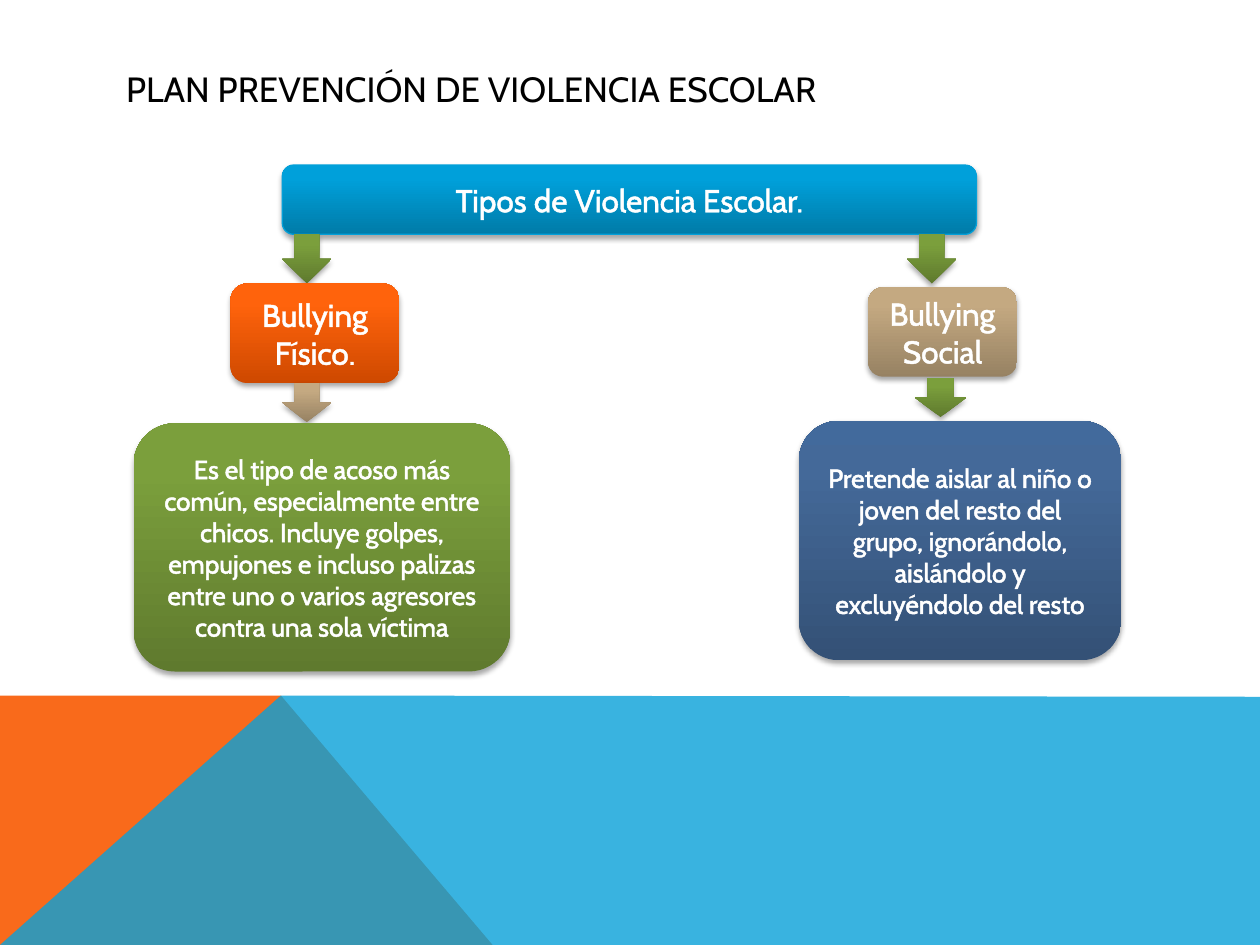
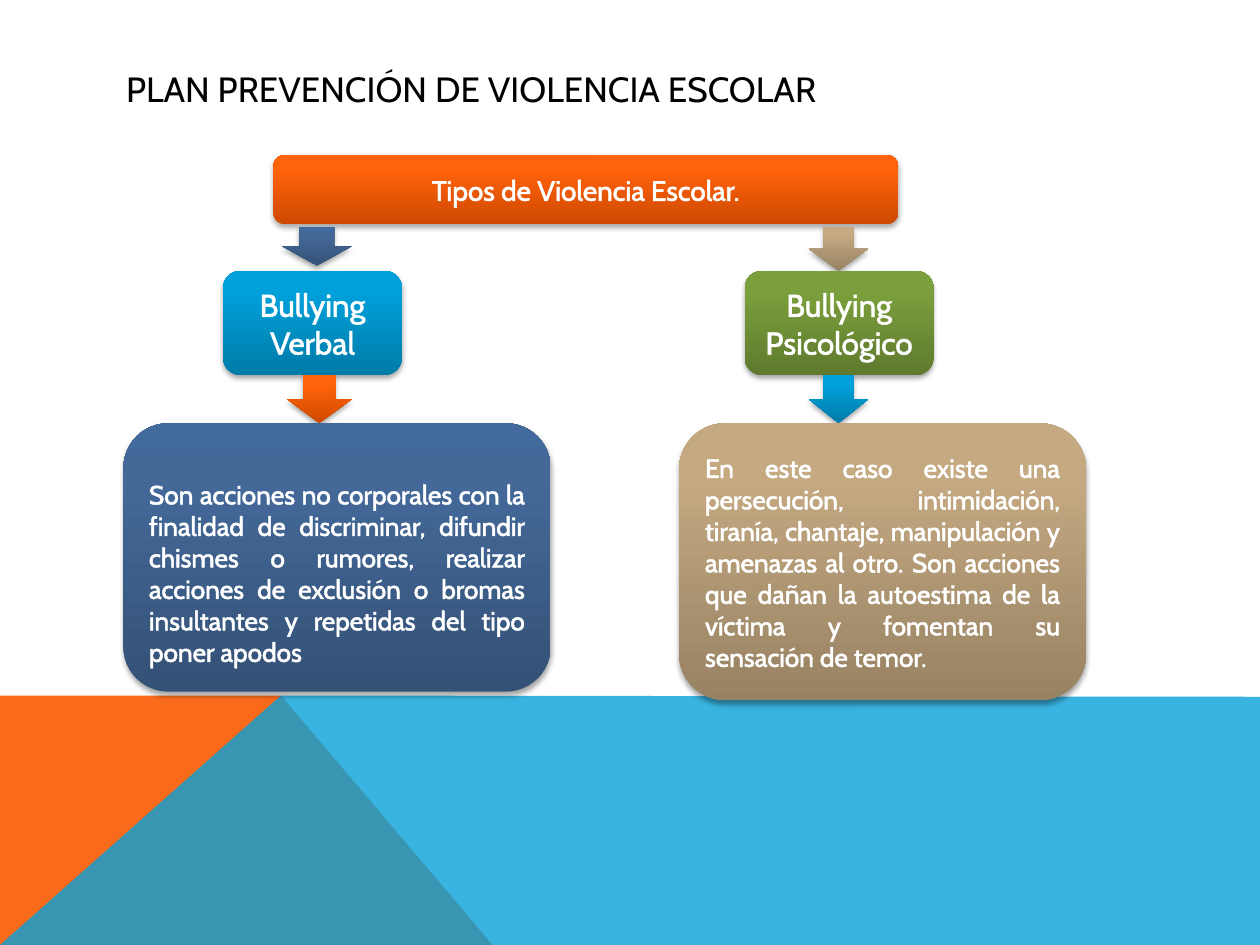
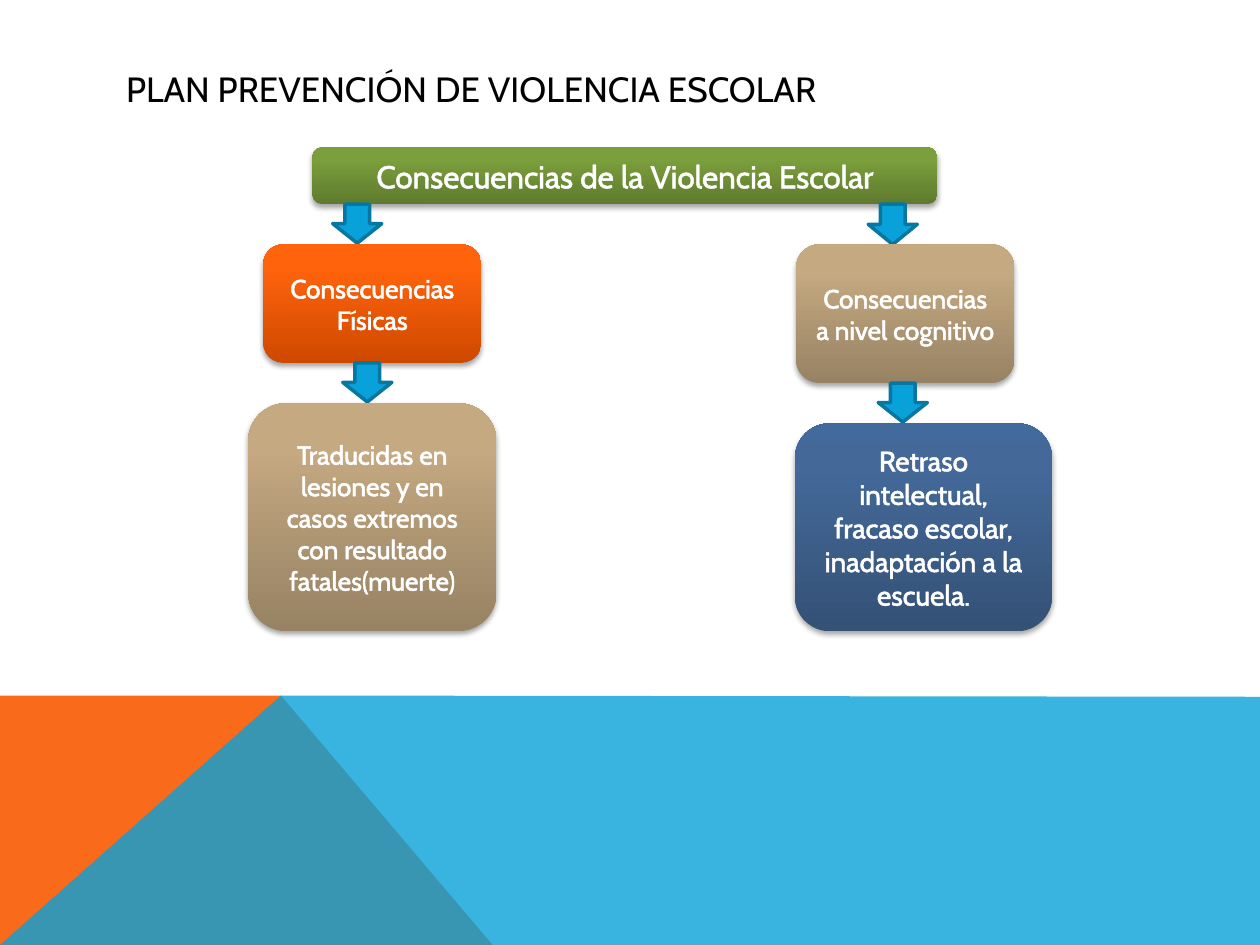
from dataclasses import dataclass

from pptx import Presentation
from pptx.dml.color import RGBColor
from pptx.enum.shapes import MSO_SHAPE
from pptx.enum.text import MSO_ANCHOR, MSO_AUTO_SIZE, PP_ALIGN
from pptx.oxml import parse_xml
from pptx.oxml.ns import nsdecls, qn
from pptx.util import Inches, Pt


@dataclass(frozen=True)
class Theme:
    font: str = "Cabin"
    ink: str = "000000"
    paper: str = "FFFFFF"
    accent: str = "08A1D9"
    accent_edge: str = "0677A1"
    header_edge: str = "03A0D9"
    wedge: str = "F96A1B"
    title_size: int = 20
    large: int = 18
    medium: int = 16
    small: int = 15
    blue: tuple = ("007BA8", "00A0DA", "00A0DB")
    green: tuple = ("5F7A2E", "7B9F3C", "7CA13B")
    orange: tuple = ("CE4900", "FF630C", "FF640E")
    sand: tuple = ("978263", "C4A981", "C6AA80")
    navy: tuple = ("345176", "446999", "426A9C")


THEME = Theme()
TITLE = "PLAN PREVENCIÓN DE VIOLENCIA ESCOLAR"
TITLE_BOX = (0.9, 0.4, 8.22, 0.6)
WEDGE_POINTS = [(0, 7.5), (0, 5.52), (2.23, 5.52), (3.91, 7.5)]
SEA_POINTS = [(0, 7.5), (2.23, 5.52), (10, 5.53), (10, 7.5)]


@dataclass
class Card:
    box: tuple
    text: str
    colors: tuple
    size: int = THEME.small
    align: PP_ALIGN = PP_ALIGN.CENTER
    top_inset: float = 0.05


@dataclass
class Arrow:
    box: tuple
    colors: tuple = None


@dataclass
class Branch:
    origin: tuple
    steps: list


@dataclass
class Chart:
    header: Card
    branches: list
    header_is_body: bool = False
    header_edge: str = None


def place(shape, box):
    shape.left, shape.top, shape.width, shape.height = map(Inches, box)


def write(shape, text, size, color=THEME.paper, align=PP_ALIGN.CENTER,
          outlined=True, top_inset=0.05):
    frame = shape.text_frame
    frame.word_wrap = True
    frame.auto_size = MSO_AUTO_SIZE.NONE
    frame.vertical_anchor = MSO_ANCHOR.MIDDLE
    frame.margin_top = Inches(top_inset)
    frame.text = text
    for paragraph in frame.paragraphs:
        paragraph.alignment = align
        paragraph.space_before = Pt(0)
        for run in paragraph.runs:
            run.font.name = THEME.font
            run.font.size = Pt(size)
            run.font.color.rgb = RGBColor.from_string(color)
            if outlined:
                run.font._element.insert(0, parse_xml(
                    f'<a:ln {nsdecls("a")} w="{Pt(1.45)}"><a:solidFill>'
                    f'<a:srgbClr val="{color}"/></a:solidFill></a:ln>'))


def draw_edge(shape, color=None, width=0.75):
    if color:
        shape.line.color.rgb = RGBColor.from_string(color)
        shape.line.width = Pt(width)
    else:
        shape.line.fill.background()


def fill_solid(shape, color):
    shape.fill.solid()
    shape.fill.fore_color.rgb = RGBColor.from_string(color)


def fill_glossy(shape, colors):
    stops = "".join(
        f'<a:gs pos="{position * 1000}"><a:srgbClr val="{color}"/></a:gs>'
        for position, color in zip((0, 80, 100), colors))
    properties = shape._element.spPr
    properties.append(parse_xml(
        f'<a:gradFill {nsdecls("a")} rotWithShape="1"><a:gsLst>{stops}</a:gsLst>'
        '<a:lin ang="16200000" scaled="0"/></a:gradFill>'))
    shape.shadow.inherit = False
    properties.find(qn("a:effectLst")).append(parse_xml(
        f'<a:outerShdw {nsdecls("a")} blurRad="{Pt(3.1)}" dist="{Pt(1.8)}" '
        'dir="5400000" rotWithShape="0"><a:srgbClr val="000000">'
        '<a:alpha val="35000"/></a:srgbClr></a:outerShdw>'))


def add_preset(slide, kind, box):
    return slide.shapes.add_shape(kind, *map(Inches, box))


def format_card(shape, card, edge=None):
    fill_glossy(shape, card.colors)
    draw_edge(shape, edge)
    write(shape, card.text, card.size, align=card.align, top_inset=card.top_inset)


def add_body_header(slide, card):
    header = slide.placeholders[1]
    place(header, card.box)
    header._element.spPr.append(parse_xml(
        f'<a:prstGeom {nsdecls("a")} prst="roundRect"><a:avLst/></a:prstGeom>'))
    format_card(header, card)
    for paragraph in header.text_frame.paragraphs:
        indents = paragraph._p.get_or_add_pPr()
        indents.set("marL", "0")
        indents.set("indent", "0")
        indents.append(parse_xml(f'<a:buNone {nsdecls("a")}/>'))


def add_arrow(slide, box, colors):
    arrow = add_preset(slide, MSO_SHAPE.DOWN_ARROW, box)
    if colors:
        fill_glossy(arrow, colors)
        draw_edge(arrow)
    else:
        arrow.shadow.inherit = False
        fill_solid(arrow, THEME.accent)
        draw_edge(arrow, THEME.accent_edge, 2)


def add_branch(slide, branch):
    left, top = branch.origin
    for step in branch.steps:
        dx, dy, width, height = step.box
        box = (left + dx, top + dy, width, height)
        if isinstance(step, Arrow):
            add_arrow(slide, box, step.colors)
        else:
            format_card(add_preset(slide, MSO_SHAPE.ROUNDED_RECTANGLE, box), step)


def add_chart_slide(deck, chart):
    slide = deck.slides.add_slide(deck.slide_layouts[1 if chart.header_is_body else 5])
    write(slide.shapes.title, TITLE, THEME.title_size, color=THEME.ink,
          align=PP_ALIGN.LEFT, outlined=False)
    if chart.header_is_body:
        add_body_header(slide, chart.header)
    else:
        header = add_preset(slide, MSO_SHAPE.ROUNDED_RECTANGLE, chart.header.box)
        format_card(header, chart.header, chart.header_edge)
    for branch in chart.branches:
        add_branch(slide, branch)
    return slide


def add_master_bands(deck, slide):
    master = deck.slide_master
    place(master.placeholders[0], TITLE_BOX)
    bands = [(WEDGE_POINTS, THEME.wedge, 100), (SEA_POINTS, THEME.accent, 80)]
    for order, (points, color, opacity) in enumerate(bands):
        start, *others = [(Inches(x), Inches(y)) for x, y in points]
        outline = slide.shapes.build_freeform(*start)
        outline.add_line_segments(others, close=True)
        band = outline.convert_to_shape()
        band.shadow.inherit = False
        fill_solid(band, color)
        draw_edge(band)
        element = band._element
        element.spPr.find(".//" + qn("a:srgbClr")).append(parse_xml(
            f'<a:alpha {nsdecls("a")} val="{opacity * 1000}"/>'))
        element.nvSpPr.cNvPr.set("id", str(20 + order))
        master.shapes._spTree.insert(2 + order, element)


CHARTS = [
    Chart(
        Card((2.24, 1.31, 5.51, 0.55), "Tipos de Violencia Escolar.", THEME.blue, THEME.large),
        [
            Branch((1.06, 1.86), [
                Arrow((1.18, 0, 0.39, 0.39), THEME.green),
                Card((0.77, 0.39, 1.34, 0.79), "Bullying Físico.", THEME.orange, THEME.large),
                Arrow((1.18, 1.18, 0.39, 0.31), THEME.sand),
                Card((0, 1.5, 2.99, 1.97),
                     "Es el tipo de acoso más común, especialmente entre chicos. "
                     "Incluye golpes, empujones e incluso palizas entre uno o varios "
                     "agresores contra una sola víctima", THEME.green),
            ]),
            Branch((6.34, 1.86), [
                Arrow((0.86, 0, 0.39, 0.39), THEME.green),
                Card((0.55, 0.42, 1.18, 0.71), "Bullying Social", THEME.sand, THEME.large),
                Arrow((0.92, 1.14, 0.41, 0.31), THEME.green),
                Card((0, 1.48, 2.56, 1.9),
                     "Pretende aislar al niño o joven del resto del grupo, ignorándolo, "
                     "aislándolo y excluyéndolo del resto", THEME.navy),
            ]),
        ],
        header_edge=THEME.header_edge,
    ),
    Chart(
        Card((2.17, 1.23, 4.96, 0.55), "Tipos de Violencia Escolar.", THEME.orange, THEME.medium),
        [
            Branch((0.98, 1.8), [
                Arrow((1.26, 0, 0.55, 0.31), THEME.navy),
                Card((0.79, 0.35, 1.42, 0.83), "Bullying Verbal", THEME.blue, THEME.large),
                Arrow((1.3, 1.18, 0.51, 0.38), THEME.orange),
                Card((0, 1.56, 3.39, 2.13),
                     "Son acciones no corporales con la finalidad de discriminar, difundir "
                     "chismes o rumores, realizar acciones de exclusión o bromas insultantes "
                     "y repetidas del tipo poner apodos",
                     THEME.navy, align=PP_ALIGN.JUSTIFY, top_inset=0.29),
            ]),
            Branch((5.39, 1.8), [
                Arrow((1.03, 0, 0.47, 0.35), THEME.sand),
                Card((0.52, 0.35, 1.5, 0.83), "Bullying\nPsicológico", THEME.green, THEME.large),
                Arrow((1.03, 1.18, 0.47, 0.38), THEME.blue),
                Card((0, 1.56, 3.23, 2.2),
                     "En este caso existe una persecución, intimidación, tiranía, chantaje, "
                     "manipulación y amenazas al otro. Son acciones que dañan la autoestima "
                     "de la víctima y fomentan su sensación de temor.",
                     THEME.sand, align=PP_ALIGN.JUSTIFY),
            ]),
        ],
        header_is_body=True,
    ),
    Chart(
        Card((2.48, 1.17, 4.96, 0.45), "Consecuencias de la Violencia Escolar",
             THEME.green, THEME.large),
        [
            Branch((1.97, 1.62), [
                Arrow((0.67, 0, 0.39, 0.31)),
                Card((0.12, 0.32, 1.73, 0.94), "Consecuencias Físicas", THEME.orange),
                Arrow((0.75, 1.26, 0.39, 0.31)),
                Card((0, 1.58, 1.97, 1.81),
                     "Traducidas en lesiones y en casos extremos con resultado "
                     "fatales(muerte)", THEME.sand),
            ]),
            Branch((6.31, 1.62), [
                Arrow((0.58, 0, 0.39, 0.32)),
                Card((0.01, 0.32, 1.73, 1.1), "Consecuencias a nivel cognitivo", THEME.sand),
                Arrow((0.66, 1.42, 0.39, 0.31)),
                Card((0, 1.74, 2.04, 1.65),
                     "Retraso intelectual, fracaso escolar, inadaptación a la escuela.",
                     THEME.navy, THEME.medium),
            ]),
        ],
    ),
]


def main():
    deck = Presentation()
    deck.slide_width, deck.slide_height = Inches(10), Inches(7.5)
    slides = [add_chart_slide(deck, chart) for chart in CHARTS]
    add_master_bands(deck, slides[0])
    deck.save("out.pptx")


if __name__ == "__main__":
    main()
